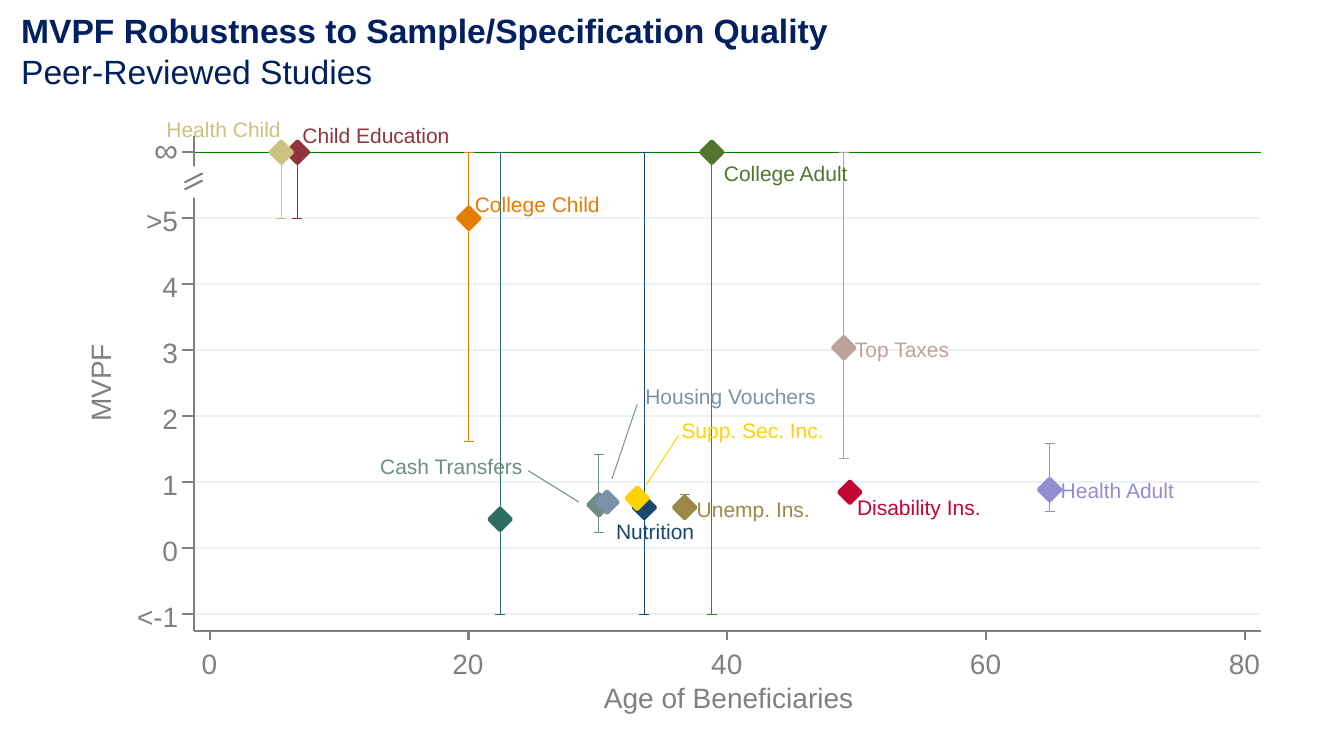
from lxml import etree
from pptx import Presentation
from pptx.dml.color import RGBColor
from pptx.enum.shapes import MSO_CONNECTOR, MSO_SHAPE
from pptx.enum.text import MSO_ANCHOR, MSO_AUTO_SIZE
from pptx.oxml.ns import qn
from pptx.util import Inches, Pt

STRAIGHT = MSO_CONNECTOR.STRAIGHT
DIAMOND = MSO_SHAPE.DIAMOND
RECT = MSO_SHAPE.RECTANGLE
TOP = MSO_ANCHOR.TOP
GROW = MSO_AUTO_SIZE.SHAPE_TO_FIT_TEXT

COLORS = {
    "title": "002060", "axis": "808080", "grid": "EAF2F3",
    "limit": "008000", "paper": "FFFFFF",
    "cash": "6E8E84", "school": "90353B", "adult": "55752F",
    "child": "E37E00", "disable": "C10534", "health": "938DD2",
    "young": "CAC27E", "house": "7B92A8", "teal": "2D6D66",
    "food": "1A476F", "income": "FFD200", "tax": "BFA19C",
    "job": "9C8847",
}

# Plot frame in inches; the infinity row is drawn at value 6
LEFT, RIGHT, HIGH, BASE = 1.92, 12.51, 1.35, 6.26
ZERO_X, STEP_X = 2.08, 0.12835
ZERO_Y, STEP_Y = 5.44, 0.655
INF = 6
CAP, MARK = 0.05, 0.22

# color, age, value, low end, high end
POINTS = [
    ("cash", 30.07, 0.66, 0.24, 1.42),
    ("school", 6.78, INF, 5, INF),
    ("adult", 38.8, INF, -1, INF),
    ("child", 20.02, 5, 1.62, INF),
    ("disable", 49.47, 0.85, 0.82, 0.9),
    ("health", 64.9, 0.89, 0.56, 1.59),
    ("young", 5.53, INF, 5, INF),
    ("house", 30.7, 0.7, 0.69, 0.75),
    ("teal", 22.44, 0.44, -1, INF),
    ("food", 33.58, 0.62, -1, INF),
    ("income", 33.03, 0.76, 0.64, 0.85),
    ("tax", 49, 3.04, 1.36, INF),
    ("job", 36.7, 0.62, 0.5, 0.81),
]

# text, color, left, top, width
LABELS = [
    ("Cash Transfers", "cash", 3.77, 4.5, 1.59),
    ("Housing Vouchers", "house", 6.4, 3.81, 1.88),
    ("Supp. Sec. Inc.", "income", 6.76, 4.14, 1.57),
    ("Nutrition", "food", 6.11, 5.14, 0.91),
    ("Child Education", "school", 3, 1.22, 1.62),
    ("College Adult", "adult", 7.18, 1.59, 1.4),
    ("College Child", "child", 4.71, 1.9, 1.4),
    ("Disability Ins.", "disable", 8.5, 4.91, 1.39),
    ("Health Adult", "health", 10.52, 4.74, 1.28),
    ("Health Child", "young", 1.65, 1.16, 1.28),
    ("Top Taxes", "tax", 8.48, 3.34, 1.12),
    ("Unemp. Ins.", "job", 6.91, 4.93, 1.28),
]

LEADERS = [
    ("house", 6.32, 4.01, 6.07, 4.75),
    ("cash", 5.74, 4.98, 5.24, 4.67),
    ("income", 6.41, 4.81, 6.73, 4.32),
]


def rgb(color):
    return RGBColor.from_string(COLORS[color])


def at_x(age):
    return ZERO_X + age * STEP_X


def at_y(value):
    return ZERO_Y - value * STEP_Y


def add_line(slide, x1, y1, x2, y2, color, width=0.75):
    line = slide.shapes.add_connector(
        STRAIGHT, Inches(x1), Inches(y1), Inches(x2), Inches(y2))
    line.line.color.rgb = rgb(color)
    line.line.width = Pt(width)
    etree.SubElement(line._element.spPr, qn("a:effectLst"))


def add_text(slide, text, color, left, top, width, size, height=0.39,
             wrap=False):
    box = slide.shapes.add_textbox(
        Inches(left), Inches(top), Inches(width), Inches(height))
    frame = box.text_frame
    frame.margin_left = frame.margin_right = 0
    frame.margin_top = frame.margin_bottom = 0
    frame.vertical_anchor = TOP
    frame.word_wrap = wrap
    frame.auto_size = GROW
    frame.text = text
    for para in frame.paragraphs:
        for run in para.runs:
            run.font.name = "Arial"
            run.font.size = Pt(size)
            run.font.color.rgb = rgb(color)
    return box


def add_block(slide, kind, left, top, width, height, color, edge=0):
    block = slide.shapes.add_shape(
        kind, Inches(left), Inches(top), Inches(width), Inches(height))
    block.shadow.inherit = False
    block.fill.solid()
    block.fill.fore_color.rgb = rgb(color)
    if edge:
        block.line.color.rgb = rgb(color)
        block.line.width = Pt(edge)
    else:
        block.line.fill.background()


def add_range(slide, color, age, low, high):
    """Draw an error bar with a cap at each end."""
    x = at_x(age)
    add_line(slide, x, at_y(low), x, at_y(high), color)
    for end in (high, low):
        add_line(slide, x - CAP, at_y(end), x + CAP, at_y(end), color)


def add_grid(slide):
    for value in range(-1, INF + 1):
        add_line(slide, LEFT, at_y(value), RIGHT, at_y(value), "grid", 1.5)
    add_line(slide, LEFT, at_y(INF), RIGHT, at_y(INF), "limit")


def add_axes(slide):
    add_line(slide, LEFT, BASE, LEFT, HIGH, "axis", 1.5)
    add_line(slide, LEFT, BASE, RIGHT, BASE, "axis", 1.5)
    names = {-1: ("<-1", 1.36), 5: (">5", 1.45)}
    for value in range(-1, INF + 1):
        y = at_y(value)
        add_line(slide, LEFT, y, LEFT - 0.11, y, "axis", 1.5)
        if value < INF:
            name, left = names.get(value, (str(value), 1.61))
            add_text(slide, name, "axis", left, y - 0.15, 1.89 - left, 20)
    for age in range(0, 81, 20):
        x, name = at_x(age), str(age)
        add_line(slide, x, BASE, x, BASE + 0.09, "axis", 1.5)
        add_text(slide, name, "axis", x - 0.08 * len(name), 6.41,
                 0.12 + 0.16 * len(name), 20)
    add_text(slide, "MVPF", "axis", 0.57, 3.54, 0.9, 20).rotation = 270
    add_text(slide, "Age of Beneficiaries", "axis", 5.99, 6.75, 2.62, 20)


def add_break(slide):
    """Cut the value axis below the infinity row."""
    add_block(slide, RECT, 1.61, 1.65, 0.58, 0.31, "paper")
    for y in (1.81, 1.88):
        add_line(slide, LEFT - 0.09, y, LEFT + 0.09, y - 0.09, "axis", 1.5)
    add_text(slide, "∞", "axis", 1.53, 1.28, 0.24, 24, 0.4)


def main():
    deck = Presentation()
    deck.slide_width, deck.slide_height = Inches(13.33), Inches(7.5)
    slide = deck.slides.add_slide(deck.slide_layouts[6])

    add_grid(slide)
    for color, age, value, low, high in POINTS:
        add_range(slide, color, age, low, high)
    for color, age, value, low, high in POINTS:
        add_block(slide, DIAMOND, at_x(age) - MARK / 2,
                  at_y(value) - MARK / 2, MARK, MARK, color, 2.5)
    add_axes(slide)
    title = add_text(
        slide,
        "MVPF Robustness to Sample/Specification Quality\n"
        "Peer-Reviewed Studies",
        "title", 0.21, 0.1, 11.62, 24, 0.81, True)
    title.text_frame.paragraphs[0].runs[0].font.bold = True
    add_break(slide)
    for color, *ends in LEADERS:
        add_line(slide, *ends, color)
    for text, color, left, top, width in LABELS:
        add_text(slide, text, color, left, top, width, 15, 0.3)

    deck.save("out.pptx")


if __name__ == "__main__":
    main()
